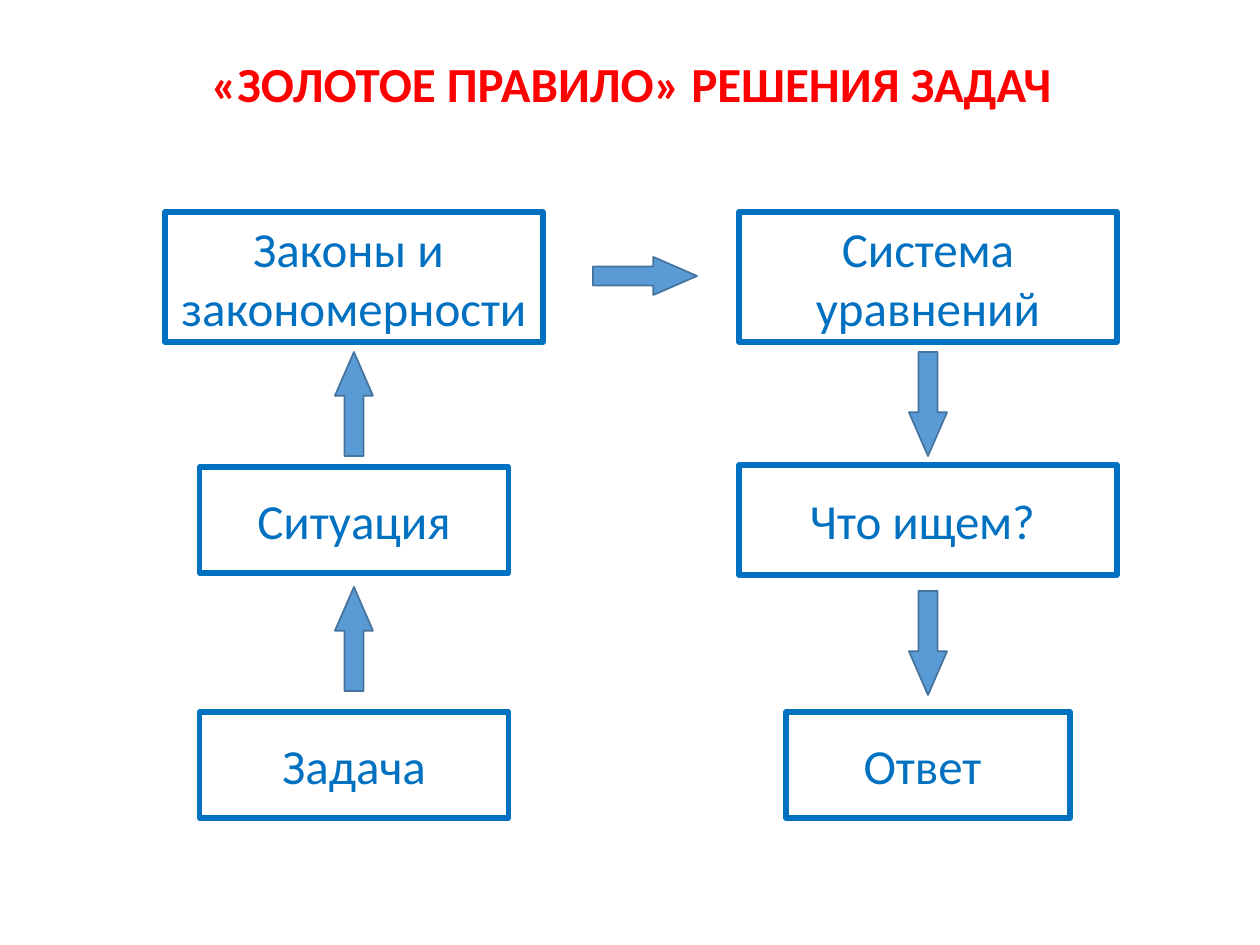
from pptx import Presentation
from pptx import util as u
from pptx.dml import color
from pptx.enum import shapes, text

SCALE = 914400 / 126
BLUE = "0070C0"
LEFT_COLUMN, RIGHT_COLUMN = 354, 928

STEPS = [
    (LEFT_COLUMN, 765, 309, 106, ["Задача"]),
    (LEFT_COLUMN, 520, 309, 106, ["Ситуация"]),
    (LEFT_COLUMN, 277, 378, 130, ["Законы и ", "закономерности"]),
    (RIGHT_COLUMN, 277, 378, 130, ["Система", "уравнений"]),
    (RIGHT_COLUMN, 520, 378, 110, ["Что ищем? "]),
    (RIGHT_COLUMN, 765, 284, 106, ["Ответ "]),
]
ARROWS = [
    (LEFT_COLUMN, 639, 0),
    (LEFT_COLUMN, 404, 0),
    (645, 276, 90),
    (RIGHT_COLUMN, 404, 180),
    (RIGHT_COLUMN, 643, 180),
]


def px(length):
    return u.Emu(round(length * SCALE))


def rgb(value):
    return color.RGBColor.from_string(value)


def write_lines(frame, lines, colour, bold=False):
    frame.word_wrap = False
    frame.auto_size = text.MSO_AUTO_SIZE.NONE
    frame.vertical_anchor = text.MSO_ANCHOR.MIDDLE
    frame.margin_left = frame.margin_right = 0
    frame.margin_top = frame.margin_bottom = 0
    para = frame.paragraphs[0]
    para.alignment = text.PP_ALIGN.CENTER
    for index, line in enumerate(lines):
        if index:
            para.add_line_break()
        span = para.add_run()
        span.text = line
        span.font.name = "Calibri"
        span.font.size = u.Pt(28)
        span.font.bold = bold
        span.font.color.rgb = rgb(colour)


def add_centred(slide, kind, centre_x, centre_y, width, height, line, weight):
    shape = slide.shapes.add_shape(
        kind, px(centre_x - width / 2), px(centre_y - height / 2), px(width), px(height))
    shape.shadow.inherit = False
    shape.line.color.rgb = rgb(line)
    shape.line.width = u.Pt(weight)
    return shape


def add_title(slide, words):
    title = slide.shapes.title
    title.left, title.top, title.width, title.height = px(193), px(47), px(876), px(72)
    write_lines(title.text_frame, [words], "FF0000", bold=True)


def add_step(slide, centre_x, centre_y, width, height, lines):
    box = add_centred(slide, shapes.MSO_SHAPE.RECTANGLE,
                      centre_x, centre_y, width, height, BLUE, 3)
    box.fill.background()
    write_lines(box.text_frame, lines, BLUE)


def add_arrow(slide, centre_x, centre_y, rotation):
    arrow = add_centred(slide, shapes.MSO_SHAPE.UP_ARROW,
                        centre_x, centre_y, 38, 104, "43739E", 1)
    arrow.fill.solid()
    arrow.fill.fore_color.rgb = rgb("5B9BD5")
    arrow.adjustments[0] = 0.5
    arrow.adjustments[1] = 1.15
    arrow.rotation = rotation


def main():
    deck = Presentation()
    deck.slide_width, deck.slide_height = u.Inches(10), u.Inches(7.5)
    slide = deck.slides.add_slide(deck.slide_layouts[5])
    add_title(slide, "«ЗОЛОТОЕ ПРАВИЛО» РЕШЕНИЯ ЗАДАЧ")
    for step in STEPS:
        add_step(slide, *step)
    for arrow in ARROWS:
        add_arrow(slide, *arrow)
    deck.save("out.pptx")


if __name__ == "__main__":
    main()
